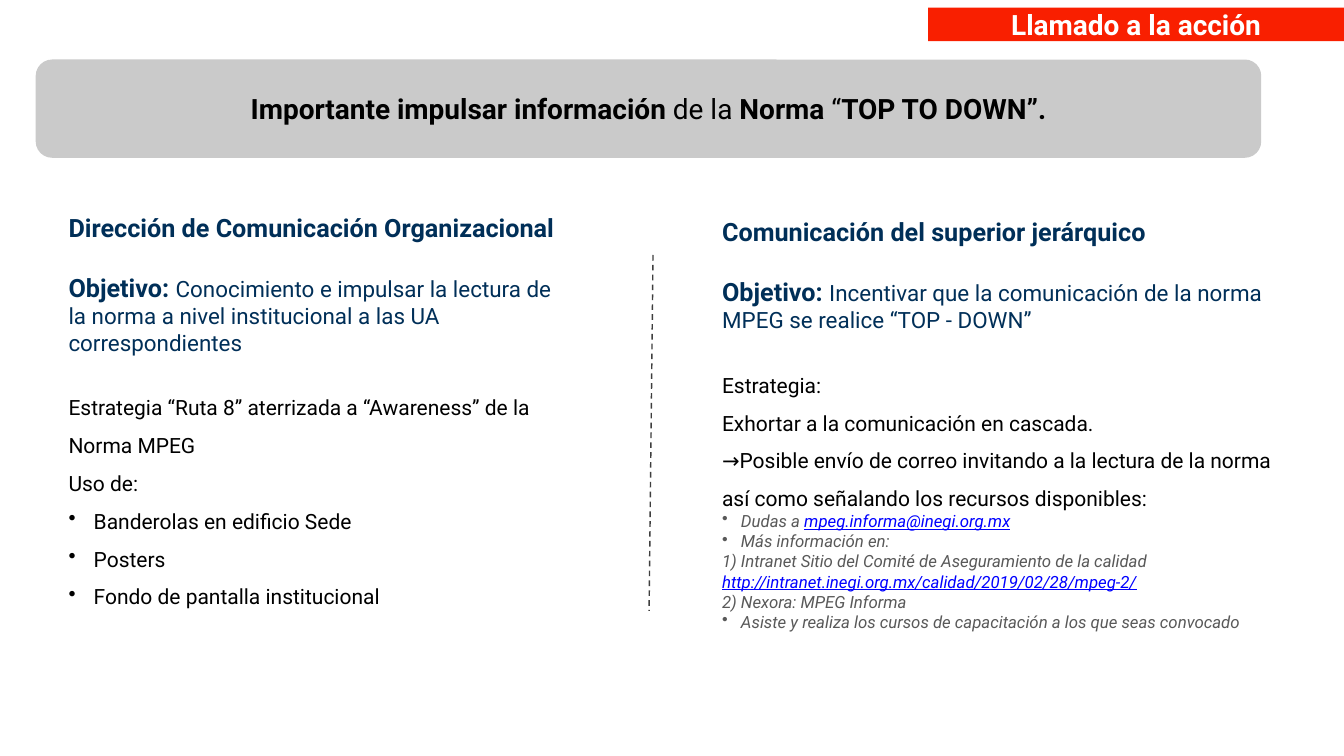
from lxml import etree
from pptx import Presentation
from pptx import util as u
from pptx.dml.color import RGBColor
from pptx.enum import dml, shapes, text
from pptx.oxml import ns

Pt = u.Pt
FONT = "Roboto"
COLORS = {
    "red": "F91F00", "gray": "CACACA", "white": "FFFFFF", "black": "000000",
    "navy": "002F58", "note": "595959", "link": "0000FF", "divider": "3E3E3E",
}


def rgb(name):
    """Return the named palette colour."""
    return RGBColor.from_string(COLORS[name])


def add_bullet(p, indent, color):
    """Give a paragraph a coloured bullet with a hanging indent."""
    pPr = p._p.get_or_add_pPr()
    pPr.set("marL", str(Pt(indent)))
    pPr.set("indent", str(-Pt(indent)))
    clr = etree.SubElement(pPr, ns.qn("a:buClr"))
    etree.SubElement(clr, ns.qn("a:srgbClr")).set("val", COLORS[color])
    etree.SubElement(pPr, ns.qn("a:buChar")).set("char", "•")


def add_text(tf, *runs, size=30, color="black", bold=False, italic=False,
             align=text.PP_ALIGN.LEFT, spacing=1, before=0, indent=0):
    """Add a paragraph of strings or (string, overrides) pairs."""
    p = tf.paragraphs[0]
    if p.runs:
        p = tf.add_paragraph()
    if indent:
        add_bullet(p, indent, color)
    p.alignment, p.line_spacing, p.space_before = align, spacing, Pt(before)
    base = dict(size=size, color=color, bold=bold, italic=italic, underline=False)
    for run in runs:
        content, changes = (run, {}) if isinstance(run, str) else run
        fmt = {**base, **changes}
        r = p.add_run()
        r.text = content
        r.font.name, r.font.size = FONT, Pt(fmt["size"])
        r.font.bold, r.font.italic = fmt["bold"], fmt["italic"]
        r.font.underline = fmt["underline"]
        r.font.color.rgb = rgb(fmt["color"])


def set_frame(tf, inset, anchor):
    """Set wrapping, insets and anchor of a text frame and return it."""
    tf.word_wrap, tf.auto_size = True, text.MSO_AUTO_SIZE.NONE
    tf.margin_left = tf.margin_right = tf.margin_top = tf.margin_bottom = Pt(inset)
    tf.vertical_anchor = anchor
    return tf


def add_title(s, content):
    """Format the title placeholder as a red banner."""
    sp = s.shapes.title
    sp.left, sp.top, sp.width, sp.height = Pt(1326), Pt(10.8), Pt(594.24), Pt(48)
    sp.fill.solid()
    sp.fill.fore_color.rgb = rgb("red")
    tf = set_frame(sp.text_frame, 0, text.MSO_ANCHOR.MIDDLE)
    add_text(tf, content, size=40, color="white", bold=True, align=text.PP_ALIGN.CENTER)


def add_message(s, *runs):
    """Add the rounded gray box with the key message."""
    sp = s.shapes.add_shape(shapes.MSO_SHAPE.ROUNDED_RECTANGLE,
                            Pt(51), Pt(85), Pt(1751), Pt(140.4))
    sp.shadow.inherit = False
    sp.fill.solid()
    sp.fill.fore_color.rgb = rgb("gray")
    sp.line.fill.background()
    tf = set_frame(sp.text_frame, 7.2, text.MSO_ANCHOR.MIDDLE)
    add_text(tf, *runs, size=40, bold=True, align=text.PP_ALIGN.CENTER)


def add_column(s, left, top, width, height, heading, goal):
    """Add a column with its heading and goal and return its text frame."""
    sp = s.shapes.add_textbox(Pt(left), Pt(top), Pt(width), Pt(height))
    tf = set_frame(sp.text_frame, 4.3, text.MSO_ANCHOR.TOP)
    add_text(tf, heading, size=36, color="navy", bold=True)
    add_text(tf, ("Objetivo: ", dict(size=36, bold=True)), goal,
             size=32, color="navy", before=42.2)
    return tf


def add_strategy(tf, *lines):
    """Add widely spaced strategy lines, set off from the goal."""
    for i, line in enumerate(lines):
        add_text(tf, line, spacing=1.5, before=0 if i else 37.5)


def add_divider(s):
    """Add the dashed line between the columns."""
    line = s.shapes.add_connector(shapes.MSO_CONNECTOR.STRAIGHT,
                                  Pt(933), Pt(364.3), Pt(927.4), Pt(872.6))
    line.line.color.rgb = rgb("divider")
    line.line.width = Pt(2)
    line.line.dash_style = dml.MSO_LINE.DASH
    etree.SubElement(line._element.spPr, ns.qn("a:effectLst"))


def main():
    """Build the call-to-action slide."""
    prs = Presentation()
    prs.slide_width, prs.slide_height = Pt(1920.24), Pt(1080)
    s = prs.slides.add_slide(prs.slide_layouts[5])
    plain = dict(bold=False)
    link = dict(color="link", underline=True)

    add_title(s, "Llamado a la acción")
    add_message(s, "Importante impulsar información", (" de la ", plain), "Norma",
                (" “", plain), "TOP TO DOWN”.")

    tf = add_column(s, 93.6, 299, 717, 600, "Dirección de Comunicación Organizacional",
                    "Conocimiento e impulsar la lectura de la norma a nivel "
                    "institucional a las UA correspondientes")
    add_strategy(tf, "Estrategia “Ruta 8” aterrizada a “Awareness” de la Norma MPEG",
                 "Uso de:")
    for item in ("Banderolas en edificio Sede", "Posters", "Fondo de pantalla institucional"):
        add_text(tf, item, spacing=1.5, indent=36)

    add_divider(s)

    tf = add_column(s, 1027.4, 305, 806.4, 620, "Comunicación del superior jerárquico",
                    "Incentivar que la comunicación de la norma MPEG se realice “TOP - DOWN”")
    add_strategy(tf, "Estrategia:", "Exhortar a la comunicación en cascada.",
                 "→Posible envío de correo invitando a la lectura de la norma "
                 "así como señalando los recursos disponibles:")
    notes = [
        (27, ["Dudas a ", ("mpeg.informa@inegi.org.mx", link)]),
        (27, ["Más información en:"]),
        (0, ["1) Intranet Sitio del Comité de Aseguramiento de la calidad ",
             ("http://intranet.inegi.org.mx/calidad/2019/02/28/mpeg-2/", link)]),
        (0, ["2) Nexora: MPEG Informa"]),
        (27, ["Asiste y realiza los cursos de capacitación a los que seas convocado"]),
    ]
    for indent, runs in notes:
        add_text(tf, *runs, size=24, color="note", italic=True, indent=indent)

    prs.save("out.pptx")


if __name__ == "__main__":
    main()
